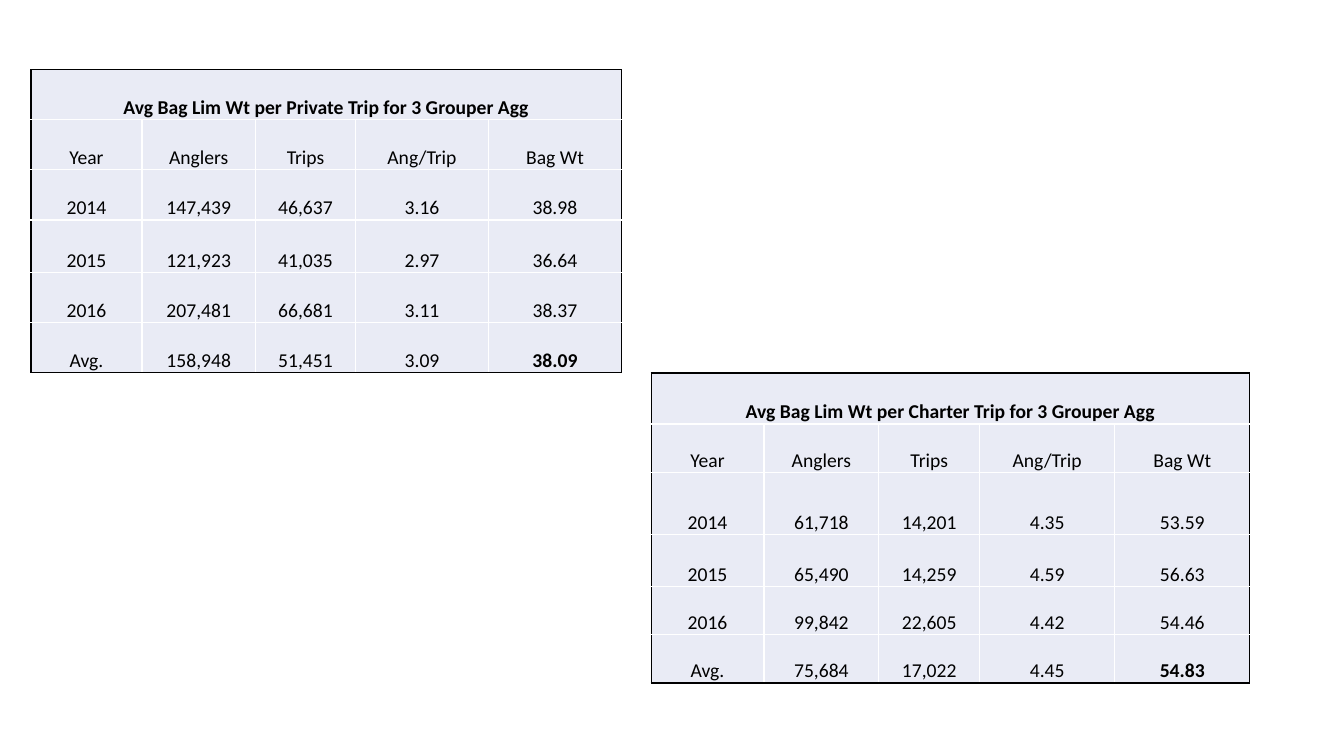
import pptx
import pptx.util
import pptx.dml.color
import pptx.enum.text
import pptx.oxml.ns
import lxml.etree

Pt = pptx.util.Pt
RGBColor = pptx.dml.color.RGBColor

# Content
HEADINGS = ("Year", "Anglers", "Trips", "Ang/Trip", "Bag Wt")
TABLES = [
    {
        "title": "Avg Bag Lim Wt per Charter Trip for 3 Grouper Agg",
        "left": 465.1, "top": 266.4,
        "widths": (80.6, 82.1, 72, 96.5, 96.5),
        "heights": (36.5, 34.6, 44.4, 37, 34.5, 34.5),
        "rows": [
            ("2014", "61,718", "14,201", "4.35", "53.59"),
            ("2015", "65,490", "14,259", "4.59", "56.63"),
            ("2016", "99,842", "22,605", "4.42", "54.46"),
            ("Avg.", "75,684", "17,022", "4.45", "54.83"),
        ],
    },
    {
        "title": "Avg Bag Lim Wt per Private Trip for 3 Grouper Agg",
        "left": 22.2, "top": 49.8,
        "widths": (79.2, 81.2, 71.4, 95, 95),
        "heights": (35.8, 35.8, 35.8, 37.4, 35.8, 35.8),
        "rows": [
            ("2014", "147,439", "46,637", "3.16", "38.98"),
            ("2015", "121,923", "41,035", "2.97", "36.64"),
            ("2016", "207,481", "66,681", "3.11", "38.37"),
            ("Avg.", "158,948", "51,451", "3.09", "38.09"),
        ],
    },
]

# Style
FONT, SIZE = "Calibri", Pt(14)
INSET = Pt(0.7)
BLACK = RGBColor(0x00, 0x00, 0x00)
WHITE = RGBColor(0xFF, 0xFF, 0xFF)
PALE_BLUE = RGBColor(0xE9, 0xEB, 0xF5)


def set_border(cell, side, color):
    tc_pr = cell._tc.get_or_add_tcPr()
    qn = pptx.oxml.ns.qn
    ln = lxml.etree.SubElement(tc_pr, qn("a:ln" + side), w=str(Pt(1)))
    fill = lxml.etree.SubElement(ln, qn("a:solidFill"))
    lxml.etree.SubElement(fill, qn("a:srgbClr"), val=str(color))


def style_cell(cell, text, bold, outer_sides):
    for side in "LRTB":
        set_border(cell, side, BLACK if side in outer_sides else WHITE)
    cell.fill.solid()
    cell.fill.fore_color.rgb = PALE_BLUE
    cell.margin_left = cell.margin_right = cell.margin_top = INSET
    cell.margin_bottom = 0
    cell.vertical_anchor = pptx.enum.text.MSO_ANCHOR.BOTTOM
    p = cell.text_frame.paragraphs[0]
    p.text = text
    p.alignment = pptx.enum.text.PP_ALIGN.CENTER
    p.font.size = SIZE
    for r in p.runs:
        r.font.name, r.font.size = FONT, SIZE
        r.font.bold = bold
        r.font.color.rgb = BLACK


def add_bag_table(s, data):
    title_row = (data["title"],) + ("",) * (len(HEADINGS) - 1)
    grid = [title_row, HEADINGS] + data["rows"]
    last_row, last_col = len(grid) - 1, len(HEADINGS) - 1
    table = s.shapes.add_table(
        len(grid), len(HEADINGS), Pt(data["left"]), Pt(data["top"]),
        Pt(sum(data["widths"])), Pt(sum(data["heights"]))).table
    table.first_row = table.horz_banding = False
    for column, width in zip(table.columns, data["widths"]):
        column.width = Pt(width)
    for row, height in zip(table.rows, data["heights"]):
        row.height = Pt(height)
    table.cell(0, 0).merge(table.cell(0, last_col))

    # Black outline on the outer sides, white rules inside
    for i, texts in enumerate(grid):
        for j, text in enumerate(texts):
            outer = ""
            if i == 0:
                outer += "T"
            if i == last_row:
                outer += "B"
            if j == 0:
                outer += "L"
            if j == last_col or (i, j) == (0, 0):
                outer += "R"
            bold = i == 0 or (i, j) == (last_row, last_col)
            style_cell(table.cell(i, j), text, bold, outer)


def main():
    prs = pptx.Presentation()
    prs.slide_width, prs.slide_height = Pt(960), Pt(540)
    s = prs.slides.add_slide(prs.slide_layouts[6])
    for data in TABLES:
        add_bag_table(s, data)
    prs.save("out.pptx")


if __name__ == "__main__":
    main()
